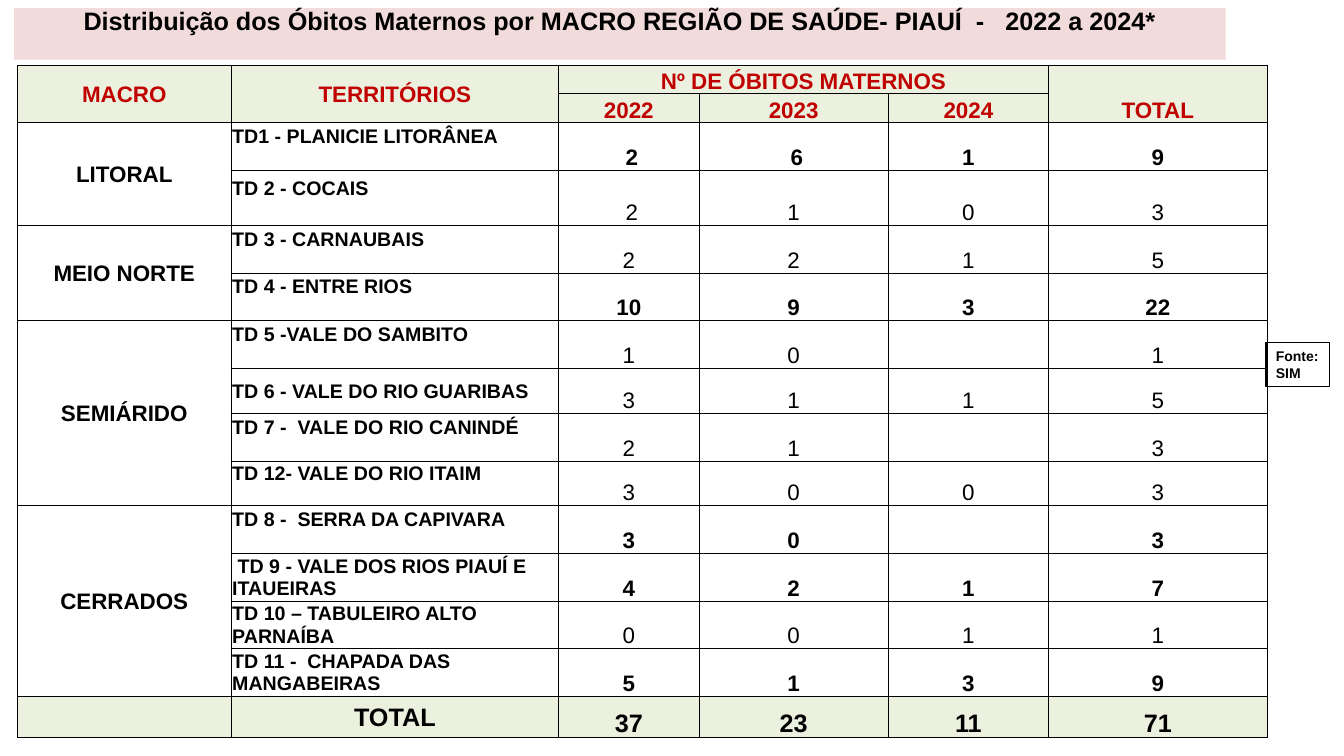
from lxml.etree import SubElement as Sub
from pptx import Presentation as Deck
from pptx.dml.color import RGBColor as Rgb
from pptx.enum.text import MSO_ANCHOR as Anchor, MSO_AUTO_SIZE as Auto, PP_ALIGN as Align
from pptx.oxml.ns import qn
from pptx.util import Pt

RED, BLACK, WHITE, GREEN, PINK = "C00000", "000000", "FFFFFF", "EBF1DE", "F2DCDB"
WIDTHS = [152.8, 233.8, 100.4, 135.2, 114.4, 156.3]
HEIGHTS = [20.4, 20.7, 34.2, 39.2, 34, 34, 34.2, 32.2, 34.2, 31.5, 34.2, 34, 34, 34.2, 29.6]
TITLE = "Distribuição dos Óbitos Maternos por MACRO REGIÃO DE SAÚDE- PIAUÍ  -   2022 a 2024*"
MACROS = [("LITORAL", 2), ("MEIO NORTE", 2), ("SEMIÁRIDO", 4), ("CERRADOS", 4)]
AREAS = [
    ("TD1 - PLANICIE LITORÂNEA", " 2", " 6", "1", "9"),
    ("TD 2 - COCAIS", " 2", "1", "0", "3"),
    ("TD 3 - CARNAUBAIS", "2", "2", "1", "5"),
    ("TD 4 - ENTRE RIOS", "10", "9", "3", "22"),
    ("TD 5 -VALE DO SAMBITO", "1", "0", "", "1"),
    ("TD 6 - VALE DO RIO GUARIBAS", "3", "1", "1", "5"),
    ("TD 7 -  VALE DO RIO CANINDÉ", "2", "1", "", "3"),
    ("TD 12- VALE DO RIO ITAIM", "3", "0", "0", "3"),
    ("TD 8 -  SERRA DA CAPIVARA", "3", "0", "", "3"),
    (" TD 9 - VALE DOS RIOS PIAUÍ E ITAUEIRAS", "4", "2", "1", "7"),
    ("TD 10 – TABULEIRO ALTO PARNAÍBA", "0", "0", "1", "1"),
    ("TD 11 -  CHAPADA DAS MANGABEIRAS", "5", "1", "3", "9"),
]
STRONG = {0, 3, 8, 9, 11}
CENTERED = {5, 9, 10, 11}
SUMS = ["37", "23", "11", "71"]


def color(text):
    return Rgb.from_string(text)


def write(frame, text, size, hue=BLACK, bold=True, align=Align.CENTER):
    frame.text = text
    para = frame.paragraphs[0]
    para.alignment = align
    for run in para.runs:
        font = run.font
        font.name, font.size, font.bold = "Arial", Pt(size), bold
        font.color.rgb = color(hue)


def border(cell):
    props = cell._tc.get_or_add_tcPr()
    for spot, side in enumerate(("lnL", "lnR", "lnT", "lnB")):
        line = Sub(props, qn("a:" + side), w=str(Pt(0.5)))
        Sub(Sub(line, qn("a:solidFill")), qn("a:srgbClr"), val=BLACK)
        props.insert(spot, line)


def style(cell, fill):
    cell.fill.solid()
    cell.fill.fore_color.rgb = color(fill)
    cell.margin_left = cell.margin_right = cell.margin_top = Pt(0.7)
    cell.margin_bottom = 0
    border(cell)


def put(cell, text, size=16, hue=BLACK, bold=True, align=Align.CENTER, anchor=Anchor.MIDDLE):
    write(cell.text_frame, text, size, hue, bold, align)
    cell.vertical_anchor = anchor


def head(grid):
    low = Anchor.BOTTOM
    for col, text, anchor in ((0, "MACRO", Anchor.MIDDLE), (1, "TERRITÓRIOS", Anchor.MIDDLE), (5, "TOTAL", low)):
        grid.cell(0, col).merge(grid.cell(1, col))
        put(grid.cell(0, col), text, hue=RED, anchor=anchor)
    grid.cell(0, 2).merge(grid.cell(0, 4))
    put(grid.cell(0, 2), "Nº DE ÓBITOS MATERNOS", hue=RED, anchor=low)
    for col, year in enumerate(("2022", "2023", "2024"), 2):
        put(grid.cell(1, col), year, hue=RED, anchor=low)


def body(grid):
    top = 2
    for name, span in MACROS:
        cell = grid.cell(top, 0)
        cell.merge(grid.cell(top + span - 1, 0))
        put(cell, name)
        top += span
    for item, (name, *counts) in enumerate(AREAS):
        row = item + 2
        area = grid.cell(row, 1)
        put(area, name, 14, align=Align.LEFT)
        if item not in CENTERED:
            area.margin_bottom = Pt(14.5)
        for col, count in enumerate(counts, 2):
            put(grid.cell(row, col), count, bold=item in STRONG, anchor=Anchor.BOTTOM)


def foot(grid):
    last = len(HEIGHTS) - 1
    put(grid.cell(last, 1), "TOTAL", 18)
    for col, total in enumerate(SUMS, 2):
        put(grid.cell(last, col), total, 18, anchor=Anchor.BOTTOM)


def table(slide):
    rows, cols = len(HEIGHTS), len(WIDTHS)
    frame = slide.shapes.add_table(rows, cols, Pt(12.4), Pt(46.6), Pt(sum(WIDTHS)), Pt(sum(HEIGHTS)))
    grid = frame.table
    grid.first_row = grid.horz_banding = False
    for col, width in zip(grid.columns, WIDTHS):
        col.width = Pt(width)
    for spot, (row, height) in enumerate(zip(grid.rows, HEIGHTS)):
        row.height = Pt(height)
        for cell in row.cells:
            style(cell, GREEN if spot in (0, 1, rows - 1) else WHITE)
    head(grid)
    body(grid)
    foot(grid)


def title(slide):
    shape = slide.shapes.title
    shape.left, shape.top, shape.width, shape.height = Pt(10), Pt(5.8), Pt(865.5), Pt(36.8)
    shape.fill.solid()
    shape.fill.fore_color.rgb = color(PINK)
    frame = shape.text_frame
    write(frame, TITLE, 18)
    frame.auto_size = Auto.NONE
    frame.word_wrap = True
    frame.vertical_anchor = Anchor.MIDDLE
    frame.margin_top, frame.margin_bottom = 0, Pt(19.7)


def source(slide):
    box = slide.shapes.add_textbox(Pt(904.3), Pt(244.8), Pt(45.5), Pt(31.5))
    box.line.color.rgb = color(BLACK)
    box.line.width = Pt(1)
    write(box.text_frame, "Fonte: SIM", 10, align=Align.LEFT)
    box.text_frame.word_wrap = True
    box.text_frame.auto_size = Auto.SHAPE_TO_FIT_TEXT


def main():
    deck = Deck()
    deck.slide_width, deck.slide_height = Pt(960), Pt(540)
    slide = deck.slides.add_slide(deck.slide_layouts[5])
    title(slide)
    table(slide)
    source(slide)
    deck.save("out.pptx")


if __name__ == "__main__":
    main()
